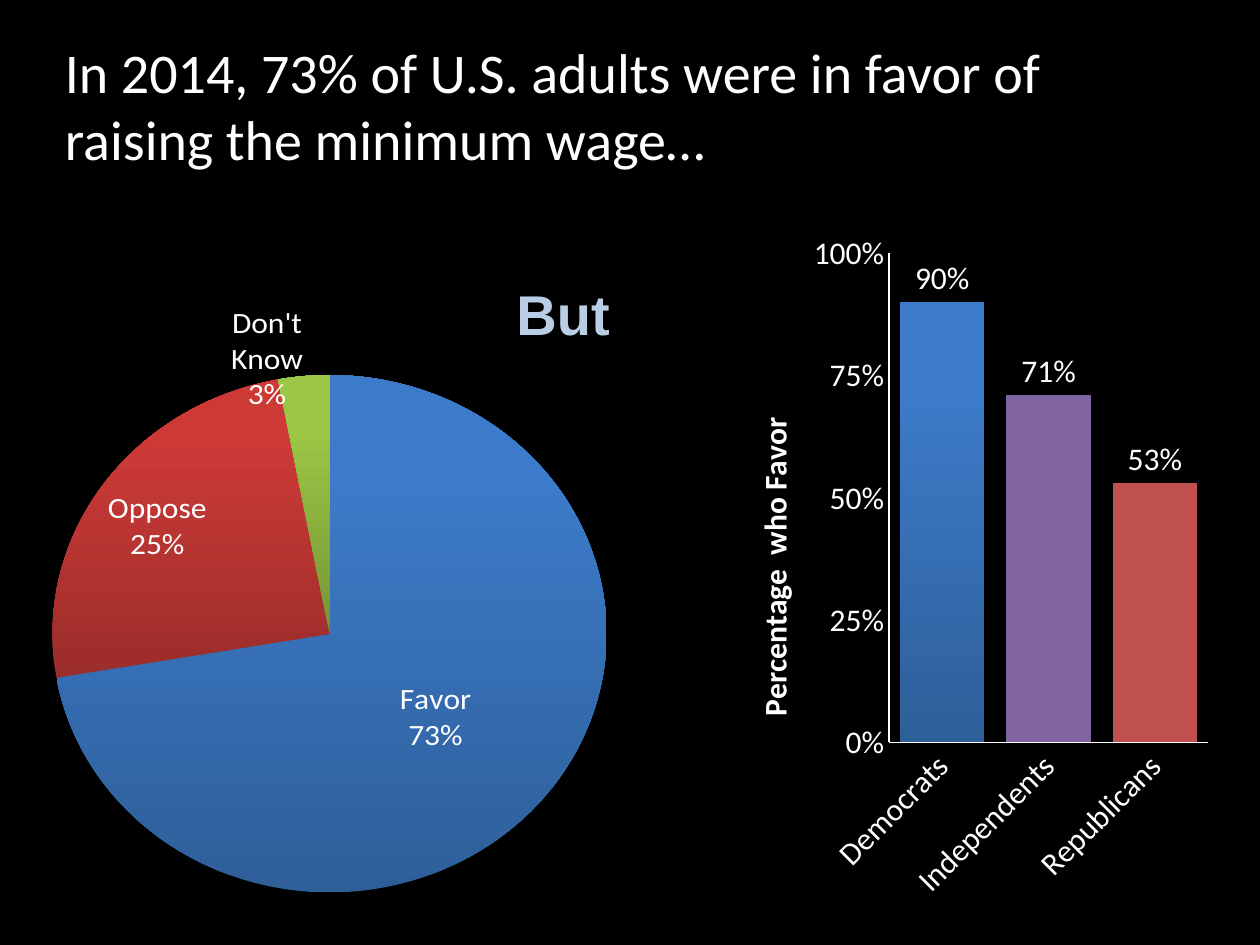
from dataclasses import dataclass

from lxml import etree
from pptx import Presentation
from pptx.chart.data import CategoryChartData
from pptx.dml.color import RGBColor
from pptx.enum.chart import XL_CHART_TYPE, XL_LABEL_POSITION, XL_TICK_MARK
from pptx.oxml.ns import qn
from pptx.util import Pt

PIE, COLUMN = XL_CHART_TYPE.PIE, XL_CHART_TYPE.COLUMN_CLUSTERED
CENTER, INSIDE_END = XL_LABEL_POSITION.CENTER, XL_LABEL_POSITION.INSIDE_END
OUTSIDE_END = XL_LABEL_POSITION.OUTSIDE_END
NO_TICK = XL_TICK_MARK.NONE


@dataclass(frozen=True)
class Theme:
    ground: str = "000000"
    ink: str = "FFFFFF"
    accent: str = "B9CDE5"
    # Gradients run from bottom to top
    blue: tuple = ("2E5F99", "3C7BC9")
    red: tuple = ("9B2D2A", "CD3A36")
    green: tuple = ("769535", "9CC746")
    purple: tuple = ("8064A2",)
    brick: tuple = ("C0504D",)
    body_font: str = "Calibri"
    accent_font: str = "Arial"
    heading_size: int = 32
    chart_size: int = 18


THEME = Theme()


def style_font(font, size, color, name, bold=False):
    font.size, font.name, font.bold = Pt(size), name, bold
    font.color.rgb = RGBColor.from_string(color)


def add_text(page, frame, text, color, name, bold=False):
    box = page.shapes.add_textbox(*map(Pt, frame))
    box.text_frame.word_wrap = True
    para = box.text_frame.paragraphs[0]
    span = para.add_run()
    span.text = text
    style_font(span.font, THEME.heading_size, color, name, bold)


def paint(fill, colors):
    """Fill with one plain colour, or with a rising gradient of two."""
    if len(colors) == 1:
        fill.solid()
        fill.fore_color.rgb = RGBColor.from_string(colors[0])
        return
    fill.gradient()
    fill.gradient_angle = 90
    for stop, color, position in zip(fill.gradient_stops, colors, (0, 0.8)):
        stop.color.rgb = RGBColor.from_string(color)
        stop.position = position


def add_chart(page, frame, kind, values, colors):
    data = CategoryChartData(number_format="0%")
    data.categories = list(values)
    data.add_series("Series 1", list(values.values()))
    chart = page.shapes.add_chart(kind, *map(Pt, frame), data).chart
    chart.has_legend = chart.has_title = False
    style_font(chart.font, THEME.chart_size, THEME.ink, THEME.body_font)
    plot = chart.plots[0]
    plot.vary_by_categories = False
    series = plot.series[0]
    for index, color in enumerate(colors):
        paint(series.points[index].format.fill, color)
    labels = series.data_labels
    labels.show_value = True
    labels.number_format, labels.number_format_is_linked = "0%", False
    return chart


def make_layout(**settings):
    layout = etree.Element(qn("c:layout"))
    manual = etree.SubElement(layout, qn("c:manualLayout"))
    for name, value in settings.items():
        etree.SubElement(manual, qn(f"c:{name}")).set("val", str(value))
    return layout


def place_plot(chart, **settings):
    area = chart.element.find(".//" + qn("c:plotArea"))
    for old in area.findall(qn("c:layout")):
        area.remove(old)
    area.insert(0, make_layout(layoutTarget="inner", xMode="edge",
                               yMode="edge", **settings))


def label_slices(chart, positions):
    """Show category over value on each slice, at its own position."""
    series = chart.plots[0].series[0]
    series.data_labels.show_category_name = True
    for index, position in enumerate(positions):
        series.points[index].data_label.position = position
    for label in chart.element.iter(qn("c:dLbl")):
        label.find(qn("c:showCatName")).set("val", "1")
        number = etree.Element(qn("c:numFmt"), formatCode="0%", sourceLinked="0")
        label.find(qn("c:dLblPos")).addprevious(number)
    for size_flag in list(chart.element.iter(qn("c:showBubbleSize"))):
        separator = etree.Element(qn("c:separator"))
        separator.text = "\n"
        size_flag.addnext(separator)


def style_axis(axis):
    axis.has_major_gridlines = False
    axis.major_tick_mark = axis.minor_tick_mark = NO_TICK
    axis.format.line.color.rgb = RGBColor.from_string(THEME.ink)
    style_font(axis.tick_labels.font, THEME.chart_size, THEME.ink, THEME.body_font)


def add_opinion_pie(page):
    chart = add_chart(page, (30, 150, 348, 372), PIE,
                      {"Favor": 0.73, "Oppose": 0.25, "Don't Know": 0.03},
                      (THEME.blue, THEME.red, THEME.green))
    place_plot(chart, x=0, y=0.09, w=0.91, h=0.9)
    label_slices(chart, (CENTER, INSIDE_END, OUTSIDE_END))


def add_party_columns(page):
    chart = add_chart(page, (414, 126, 282, 396), COLUMN,
                      {"Democrats": 0.9, "Independents": 0.71, "Republicans": 0.53},
                      (THEME.blue, THEME.purple, THEME.brick))
    plot = chart.plots[0]
    plot.gap_width = 26
    plot.series[0].data_labels.position = OUTSIDE_END

    # Axes
    parties, share = chart.category_axis, chart.value_axis
    for axis in (parties, share):
        style_axis(axis)
    slant = parties.tick_labels.font and parties.format and chart.element.find(
        ".//" + qn("c:catAx") + "/" + qn("c:txPr") + "/" + qn("a:bodyPr"))
    slant.set("rot", "-2700000")
    share.minimum_scale, share.maximum_scale, share.major_unit = 0, 1, 0.25
    share.tick_labels.number_format = "0%"
    share.tick_labels.number_format_is_linked = False

    # Value axis title
    para = share.axis_title.text_frame.paragraphs[0]
    span = para.add_run()
    span.text = "Percentage  who Favor"
    style_font(span.font, THEME.chart_size, THEME.ink, THEME.body_font, True)


def main():
    deck = Presentation()
    deck.slide_width, deck.slide_height = Pt(720), Pt(540)
    page = deck.slides.add_slide(deck.slide_layouts[6])
    paint(page.background.fill, (THEME.ground,))

    # Heading
    add_text(page, (30, 18, 606, 85),
             "In 2014, 73% of U.S. adults were in favor of raising the minimum wage…",
             THEME.ink, THEME.body_font)

    # Charts, with the bridging word between them
    add_opinion_pie(page)
    add_text(page, (288, 156, 84, 46), "But", THEME.accent, THEME.accent_font, True)
    add_party_columns(page)
    deck.save("out.pptx")


if __name__ == "__main__":
    main()
